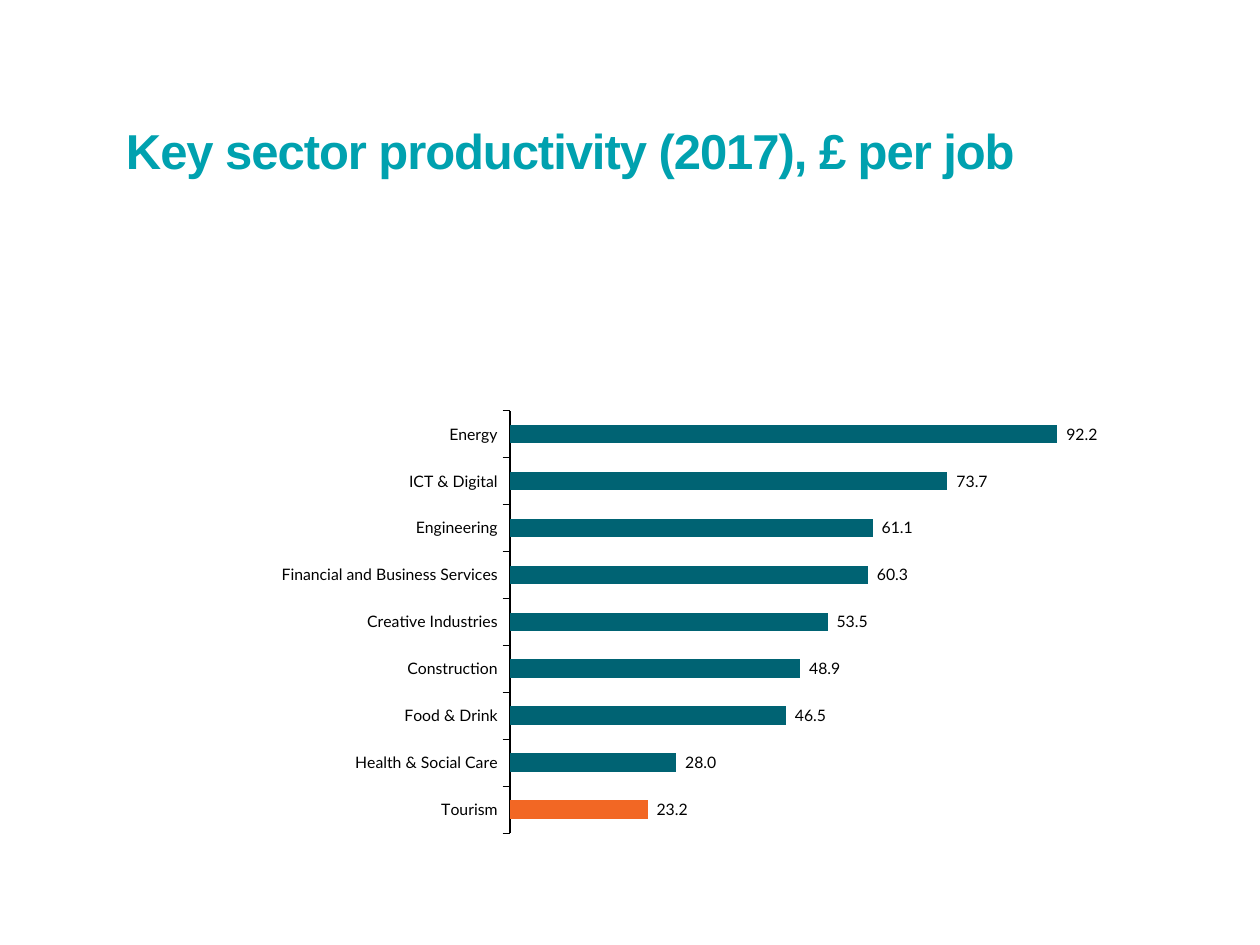
"""Build a slide with a bar chart of key sector productivity."""
from lxml.etree import SubElement as Sub
from pptx import Presentation
from pptx.chart.data import CategoryChartData as Data
from pptx.dml.color import RGBColor as Rgb
from pptx.enum.chart import XL_CHART_TYPE as Kind, XL_LABEL_POSITION as Spot
from pptx.enum.chart import XL_TICK_LABEL_POSITION as Tick, XL_TICK_MARK as Mark
from pptx.enum.text import MSO_ANCHOR as Anchor
from pptx.oxml.ns import qn
from pptx.util import Cm, Pt

TITLE = "Key sector productivity (2017), £ per job"
SECTORS = [
    ("Tourism", 23.2),
    ("Health & Social Care", 28.0),
    ("Food & Drink", 46.5),
    ("Construction", 48.9),
    ("Creative Industries", 53.5),
    ("Financial and Business Services", 60.3),
    ("Engineering", 61.1),
    ("ICT & Digital", 73.7),
    ("Energy", 92.2),
]
FOCUS = "Tourism"
HUES = {"title": "00A1AF", "bar": "006373", "focus": "F26724", "ink": "000000"}
PLOT = {"x": 0.4, "y": 0.02, "w": 0.57, "h": 0.95}
FORM = '_-* #,##0.0_-;\\-* #,##0.0_-;_-* "-"??_-;'


def hue(name):
    return Rgb.from_string(HUES[name])


def style(font, face, size, color, bold=False):
    font.name, font.size, font.bold = face, Pt(size), bold
    font.color.rgb = hue(color)


def write(slide, text, box, face="Arial", size=28, color="title",
          bold=True, lead=68, track=-60):
    frame = slide.shapes.add_textbox(*map(Cm, box)).text_frame
    frame.word_wrap = True
    frame.vertical_anchor = Anchor.BOTTOM
    frame.margin_left = frame.margin_right = 0
    frame.margin_top = frame.margin_bottom = 0
    para = frame.paragraphs[0]
    para.line_spacing = Pt(lead)
    run = para.add_run()
    run.text = text
    style(run.font, face, size, color, bold)
    run.font._element.set("spc", str(track))


def place(chart):
    area = chart._chartSpace.chart.plotArea
    for old in area.findall(qn("c:layout")):
        area.remove(old)
    outer = area.makeelement(qn("c:layout"))
    area.insert(0, outer)
    inner = Sub(outer, qn("c:manualLayout"))
    Sub(inner, qn("c:layoutTarget"), val="inner")
    for side in "xy":
        Sub(inner, qn(f"c:{side}Mode"), val="edge")
    for side, part in PLOT.items():
        Sub(inner, qn(f"c:{side}"), val=str(part))


def draw(slide, box):
    names, nums = zip(*SECTORS)
    data = Data(number_format=FORM)
    data.categories = names
    data.add_series("Series 1", nums)
    chart = slide.shapes.add_chart(Kind.BAR_CLUSTERED, *map(Cm, box), data).chart
    chart.has_legend = chart.has_title = False
    style(chart.font, "Lato", 9, "ink")
    place(chart)

    axis = chart.category_axis
    axis.major_tick_mark, axis.minor_tick_mark = Mark.OUTSIDE, Mark.NONE
    axis.tick_label_position = Tick.LOW
    axis.format.line.color.rgb = hue("ink")
    axis.format.line.width = Pt(0.75)
    scale = chart.value_axis
    scale.visible = scale.has_major_gridlines = False
    scale.minimum_scale, scale.maximum_scale = 0, 100

    plot = chart.plots[0]
    plot.gap_width, plot.vary_by_categories = 150, False
    bars = plot.series[0]
    point = bars.points[names.index(FOCUS)]
    for part, name in ((bars, "bar"), (point, "focus")):
        part.format.fill.solid()
        part.format.fill.fore_color.rgb = hue(name)
    tags = bars.data_labels
    tags.show_value, tags.position = True, Spot.OUTSIDE_END
    tags.number_format, tags.number_format_is_linked = FORM, False
    style(tags.font, "Lato", 9, "ink")


def main():
    deck = Presentation()
    deck.slide_width, deck.slide_height = Cm(25.4), Cm(19.05)
    slide = deck.slides.add_slide(deck.slide_layouts[6])
    write(slide, TITLE, (2.54, 0.43, 20.88, 3.18))
    draw(slide, (1.88, 8.1, 21, 8.97))
    deck.save("out.pptx")


if __name__ == "__main__":
    main()
